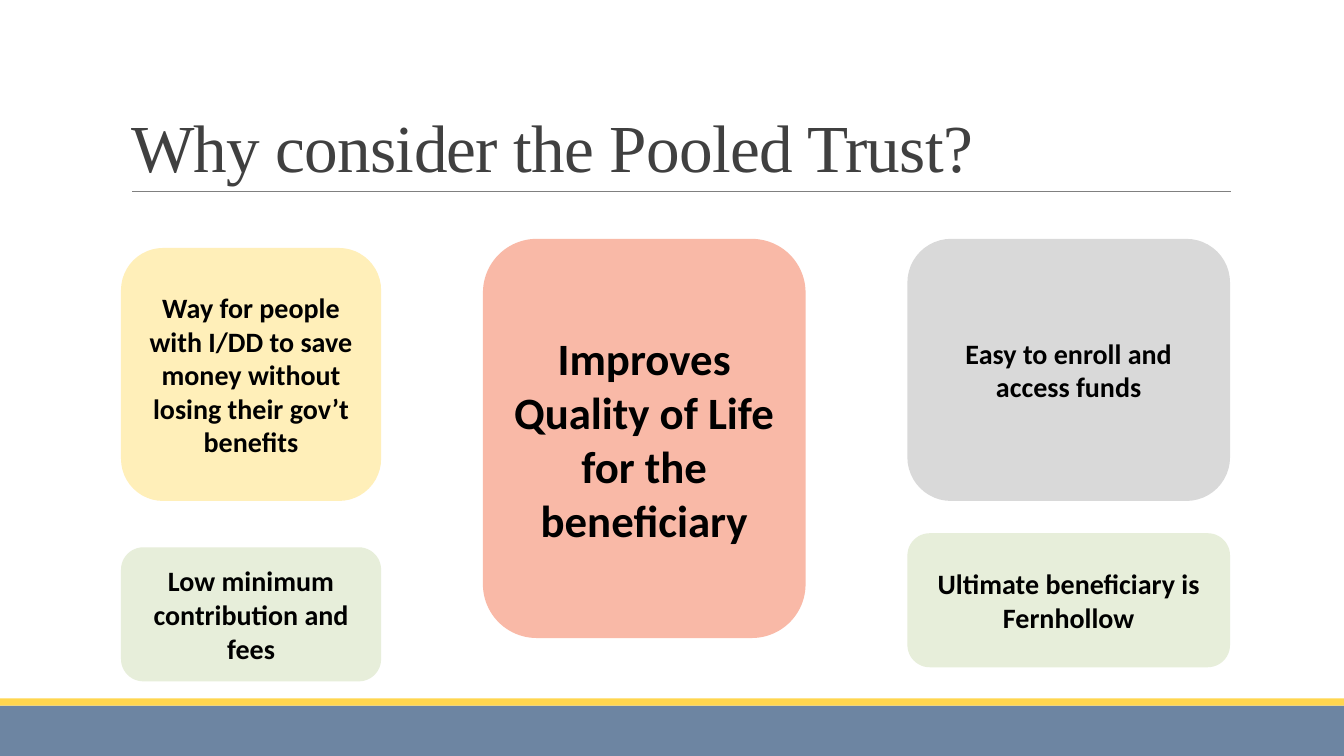
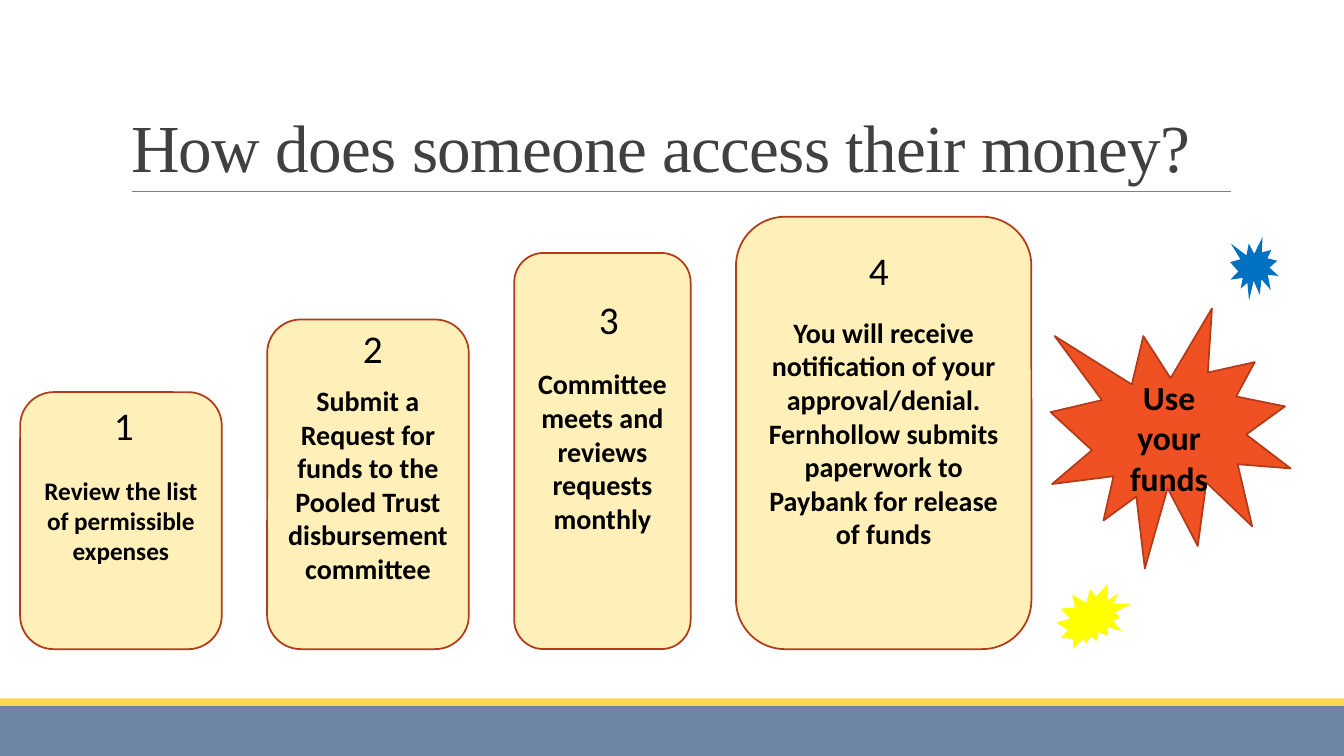
from dataclasses import dataclass

import lxml.etree
import pptx
import pptx.dml.color
import pptx.enum.shapes
import pptx.enum.text
import pptx.oxml.ns
import pptx.util

Inches = pptx.util.Inches
SHAPE = pptx.enum.shapes.MSO_SHAPE
ALIGN = pptx.enum.text.PP_ALIGN
ANCHOR = pptx.enum.text.MSO_ANCHOR
AUTO_SIZE = pptx.enum.text.MSO_AUTO_SIZE


@dataclass(frozen=True)
class Theme:
    title_font: str = "Times New Roman"
    body_font: str = "Calibri"
    title_size: int = 48
    hero_size: int = 32
    number_size: int = 28
    burst_size: int = 24
    body_size: int = 20
    small_size: int = 18
    title: str = "404040"
    text: str = "000000"
    rule: str = "808080"
    band: str = "6D85A2"
    stripe: str = "FFD64F"
    cream: str = "FFEFB9"
    salmon: str = "F9B9A7"
    sage: str = "E7EEDA"
    gray: str = "D9D9D9"
    outline: str = "B23C1A"
    burst: str = "F05123"
    yellow: str = "FFFF00"
    blue: str = "0070C0"


THEME = Theme()
WIDTH, HEIGHT = 13.33, 7.5


def rgb(value):
    return pptx.dml.color.RGBColor.from_string(value)


def add_box(slide, kind, box, fill, line=None):
    sp = slide.shapes.add_shape(kind, *map(Inches, box))
    sp.shadow.inherit = False
    sp.fill.solid()
    sp.fill.fore_color.rgb = rgb(fill)
    if line:
        sp.line.color.rgb = rgb(line)
        sp.line.width = pptx.util.Pt(1.25)
    else:
        sp.line.fill.background()
    return sp


def set_text(sp, text, size, bold=True, align=ALIGN.CENTER, anchor=ANCHOR.MIDDLE,
             font=THEME.body_font, color=THEME.text):
    tf = sp.text_frame
    tf.word_wrap = True
    tf.auto_size = AUTO_SIZE.NONE
    tf.vertical_anchor = anchor
    tf.text = text
    for p in tf.paragraphs:
        p.alignment = align
        for r in p.runs:
            r.font.name = font
            r.font.size = pptx.util.Pt(size)
            r.font.bold = bold
            r.font.color.rgb = rgb(color)


def add_label(slide, box, text, size, **style):
    sp = slide.shapes.add_textbox(*map(Inches, box))
    set_text(sp, text, size, anchor=ANCHOR.TOP, **style)


def add_card(slide, box, text, size, fill, line=None):
    sp = add_box(slide, SHAPE.FLOWCHART_ALTERNATE_PROCESS, box, fill, line)
    set_text(sp, text, size)


def add_titled_slide(prs, title):
    """Slide with the shared footer bands, title and rule."""
    slide = prs.slides.add_slide(prs.slide_layouts[5])
    add_box(slide, SHAPE.RECTANGLE, (0, 7, WIDTH, 0.5), THEME.band)
    add_box(slide, SHAPE.RECTANGLE, (0, 6.93, WIDTH, 0.07), THEME.stripe)

    rule = slide.shapes.add_connector(
        pptx.enum.shapes.MSO_CONNECTOR.STRAIGHT,
        Inches(1.31), Inches(1.9), Inches(12.21), Inches(1.9))
    rule.line.color.rgb = rgb(THEME.rule)
    rule.line.width = pptx.util.Pt(0.5)
    lxml.etree.SubElement(rule._element.spPr, pptx.oxml.ns.qn("a:effectLst"))

    sp = slide.shapes.title
    sp.left, sp.top, sp.width, sp.height = map(Inches, (1.2, 0.31, 11, 1.59))
    set_text(sp, title, THEME.title_size, bold=False, align=ALIGN.LEFT,
             anchor=ANCHOR.BOTTOM, font=THEME.title_font, color=THEME.title)
    p = sp.text_frame.paragraphs[0]
    p.line_spacing = 0.85
    p.runs[0].font._element.set("spc", "-50")
    return slide


def add_column(slide, left, width, cards):
    """Stack of cards; each is (top, height, text, size, fill)."""
    for top, height, text, size, fill in cards:
        add_card(slide, (left, top, width, height), text, size, fill)


def build_reasons(prs):
    slide = add_titled_slide(prs, "Why consider the Pooled Trust?")
    size = THEME.body_size
    add_column(slide, 1.2, 2.58, [
        (2.46, 2.51, "Way for people with I/DD to save money without losing their "
         "gov’t benefits", size, THEME.cream),
        (5.43, 1.33, "Low minimum contribution and fees", size, THEME.sage)])
    add_column(slide, 4.79, 3.2, [
        (2.37, 3.96, "Improves Quality of Life for the beneficiary",
         THEME.hero_size, THEME.salmon)])
    add_column(slide, 9, 3.2, [
        (2.37, 2.6, "Easy to enroll and access funds", size, THEME.gray),
        (5.29, 1.33, "Ultimate beneficiary is\nFernhollow", size, THEME.sage)])


def add_steps(slide, left, bottom, gap, steps):
    """Rising row of numbered cards that share a bottom edge."""
    for number, (width, height, text, size, dx, dy) in enumerate(steps, 1):
        top = bottom - height
        add_card(slide, (left, top, width, height), text, size,
                 THEME.cream, THEME.outline)
        add_label(slide, (left + dx, top + dy, 0.49, 0.57), str(number),
                  THEME.number_size, bold=False, align=ALIGN.LEFT)
        left += width + gap


def add_celebration(slide, left, top):
    """Large burst with its label and two small sparks."""
    add_box(slide, SHAPE.EXPLOSION1, (left, top, 2.38, 2.58),
            THEME.burst, THEME.outline)
    add_box(slide, SHAPE.EXPLOSION2, (left + 0.06, top + 2.73, 0.74, 0.65),
            THEME.yellow)
    add_box(slide, SHAPE.EXPLOSION1, (left + 1.78, top - 0.71, 0.48, 0.63),
            THEME.blue)
    add_label(slide, (left + 0.58, top + 0.63, 1.19, 1.31), "Use your funds",
              THEME.burst_size)


def build_access(prs):
    slide = add_titled_slide(prs, "How does someone access their money?")
    # Width, height, text, text size, number offset from the card's corner
    steps = [
        (2, 2.55, "Review the list of permissible expenses",
         THEME.small_size, 0.83, 0.04),
        (2, 3.27, "Submit a Request for funds to the Pooled Trust "
         "disbursement committee", THEME.body_size, 0.85, 0),
        (1.75, 3.93, "Committee meets and reviews requests monthly",
         THEME.body_size, 0.74, 0.37),
        (2.93, 4.29, "You will receive notification of your approval/denial. "
         "Fernhollow submits paperwork to Paybank for release of funds",
         THEME.body_size, 1.22, 0.24)]
    add_steps(slide, 0.2, 6.44, 0.45, steps)
    add_celebration(slide, 10.42, 3.06)


def main():
    prs = pptx.Presentation()
    prs.slide_width, prs.slide_height = Inches(WIDTH), Inches(HEIGHT)
    build_reasons(prs)
    build_access(prs)
    prs.save("out.pptx")


if __name__ == "__main__":
    main()
